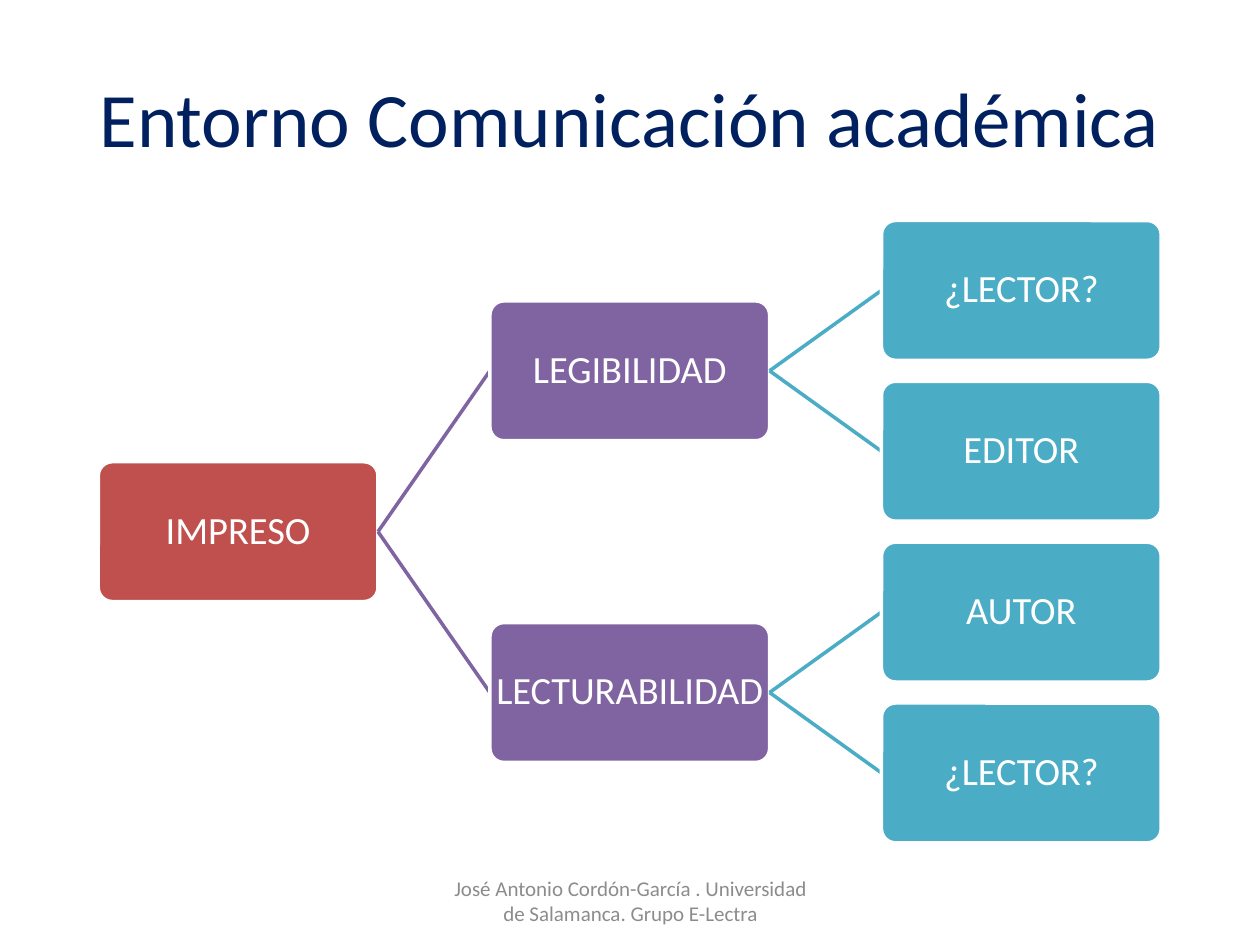
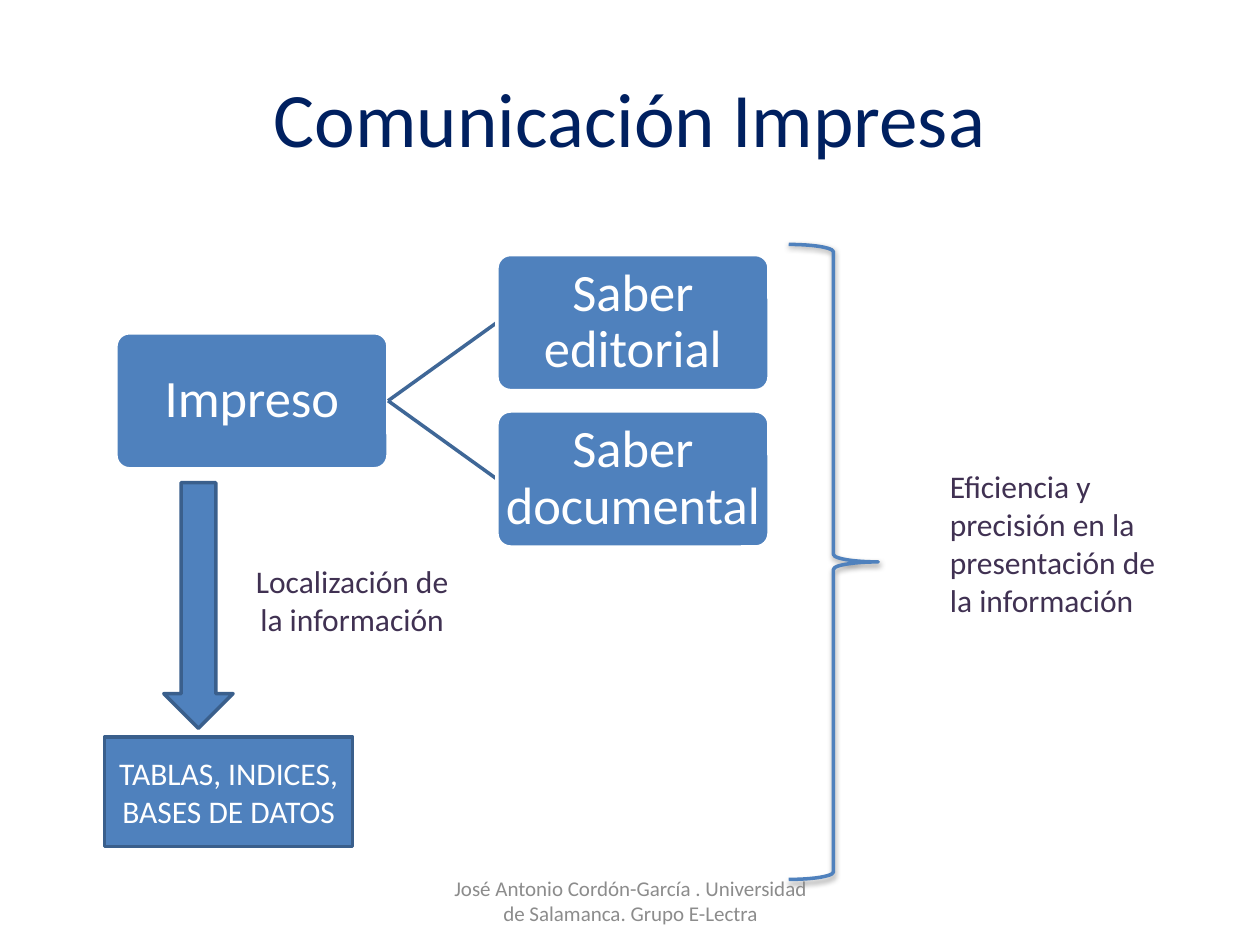
"""Two slides on printed academic communication, with tree diagrams."""
from dataclasses import dataclass

from lxml.etree import SubElement
from pptx import Presentation
from pptx.dml.color import RGBColor
from pptx.enum.shapes import MSO_CONNECTOR as LINE, MSO_SHAPE as SHAPE
from pptx.enum.text import MSO_ANCHOR as ANCHOR, PP_ALIGN as ALIGN
from pptx.oxml.ns import qn
from pptx.util import Inches, Pt

FONT = "Calibri"
FOOTER = "José Antonio Cordón-García . Universidad de Salamanca. Grupo E-Lectra"
COLORS = {
    "white": "FFFFFF", "title": "002060", "footer": "8C8C8C", "note": "403152",
    "red": "C0504D", "purple": "8064A2", "teal": "4BACC6",
    "blue": "4F81BD", "outline": "3A5F8C", "link": "3F6797",
}


@dataclass(frozen=True)
class Node:
    text: str
    children: tuple["Node", ...] = ()

    @property
    def leaves(self) -> int:
        return sum(child.leaves for child in self.children) or 1


@dataclass(frozen=True)
class Tree:
    root: Node
    left: float
    top: float
    width: float
    size: int
    fills: tuple[str, ...]
    links: tuple[str, ...]

    @property
    def height(self) -> float:
        return self.width / 2

    def corner(self, node: Node, level: int, row: int) -> tuple[float, float]:
        x = self.left + level * self.width * 1.4
        y = self.top + (row + (node.leaves - 1) / 2) * self.height * 1.15
        return x, y


@dataclass(frozen=True)
class Note:
    text: str
    box: tuple[float, float, float, float]
    size: int = 18
    color: str = "note"
    align: ALIGN = ALIGN.CENTER
    anchor: ANCHOR = ANCHOR.TOP


PRINT_TREE = Tree(
    Node("IMPRESO", (
        Node("LEGIBILIDAD", (Node("¿LECTOR?"), Node("EDITOR"))),
        Node("LECTURABILIDAD", (Node("AUTOR"), Node("¿LECTOR?"))),
    )),
    left=0.78, top=1.75, width=2.22, size=22,
    fills=("red", "purple", "teal"), links=("purple", "teal"),
)
KNOWLEDGE_TREE = Tree(
    Node("Impreso", (Node("Saber editorial"), Node("Saber documental"))),
    left=0.92, top=2.02, width=2.16, size=30,
    fills=("blue", "blue"), links=("link",),
)
FOOTER_NOTE = Note(FOOTER, (3.42, 6.95, 3.17, 0.4), 12, "footer", anchor=ANCHOR.MIDDLE)
NOTES = (
    Note("Localización de la información", (1.93, 4.41, 1.73, 1.01)),
    Note("Eficiencia y precisión en la presentación de la información",
         (7.44, 3.66, 2.05, 1.31), align=ALIGN.LEFT),
)


def rgb(name: str) -> RGBColor:
    return RGBColor.from_string(COLORS[name])


def write(sp, text: str, *, size: int, color: str = "white", align=ALIGN.CENTER,
          anchor=ANCHOR.MIDDLE, spacing: float = 1.0, inset: float | None = None) -> None:
    tf = sp.text_frame
    tf.word_wrap = True
    tf.vertical_anchor = anchor
    if inset is not None:
        tf.margin_left = tf.margin_right = tf.margin_top = tf.margin_bottom = Inches(inset)
    p = tf.paragraphs[0]
    p.alignment = align
    p.line_spacing = spacing
    r = p.add_run()
    r.text = text
    r.font.name, r.font.size = FONT, Pt(size)
    r.font.color.rgb = rgb(color)


def add_shape(s, kind: SHAPE, box: tuple, line: str, fill: str | None = None):
    sp = s.shapes.add_shape(kind, *map(Inches, box))
    sp.shadow.inherit = False
    if fill:
        sp.fill.solid()
        sp.fill.fore_color.rgb = rgb(fill)
    else:
        sp.fill.background()
    sp.line.color.rgb = rgb(line)
    sp.line.width = Pt(2)
    return sp


def add_link(s, start: tuple, end: tuple, color: str) -> None:
    link = s.shapes.add_connector(LINE.STRAIGHT, *map(Inches, start + end))
    link.line.color.rgb = rgb(color)
    link.line.width = Pt(2)
    SubElement(link._element.spPr, qn("a:effectLst"))


def add_note(s, note: Note) -> None:
    sp = s.shapes.add_textbox(*map(Inches, note.box))
    write(sp, note.text, size=note.size, color=note.color, align=note.align, anchor=note.anchor)


def add_branch(s, tree: Tree, node: Node, level: int = 0, row: int = 0) -> None:
    x, y = tree.corner(node, level, row)
    sp = add_shape(s, SHAPE.ROUNDED_RECTANGLE, (x, y, tree.width, tree.height),
                   "white", tree.fills[level])
    sp.adjustments[0] = 0.1
    write(sp, node.text, size=tree.size, spacing=0.9, inset=0)
    middle = tree.height / 2
    for child in node.children:
        child_x, child_y = tree.corner(child, level + 1, row)
        add_link(s, (x + tree.width, y + middle), (child_x, child_y + middle), tree.links[level])
        add_branch(s, tree, child, level + 1, row)
        row += child.leaves


def add_soft_shadow(sp) -> None:
    effects = sp._element.spPr.find(qn("a:effectLst"))
    shadow = SubElement(effects, qn("a:outerShdw"), blurRad=str(Pt(3.1)), dist=str(Pt(1.6)),
                        dir="5400000", rotWithShape="0")
    color = SubElement(shadow, qn("a:srgbClr"), val="000000")
    SubElement(color, qn("a:alpha"), val="38000")


def add_slide(prs, title: str, tree: Tree):
    s = prs.slides.add_slide(prs.slide_layouts[5])
    sp = s.shapes.title
    sp.left, sp.top, sp.width, sp.height = map(Inches, (0.5, 0.3, 9, 1.25))
    write(sp, title, size=44, color="title")
    add_branch(s, tree, tree.root)
    return s


def main() -> None:
    prs = Presentation()
    prs.slide_width, prs.slide_height = Inches(10), Inches(7.5)

    s = add_slide(prs, "Entorno Comunicación académica", PRINT_TREE)
    add_note(s, FOOTER_NOTE)

    s = add_slide(prs, "Comunicación Impresa", KNOWLEDGE_TREE)
    tables = add_shape(s, SHAPE.RECTANGLE, (0.83, 5.85, 1.97, 0.87), "outline", "blue")
    write(tables, "TABLAS, INDICES, BASES DE DATOS", size=18)
    arrow = add_shape(s, SHAPE.RIGHT_ARROW, (0.6, 4.53, 1.95, 0.55), "outline", "blue")
    arrow.rotation = 90
    brace = add_shape(s, SHAPE.RIGHT_BRACE, (6.26, 1.94, 0.71, 5.04), "blue")
    add_soft_shadow(brace)
    for note in (*NOTES, FOOTER_NOTE):
        add_note(s, note)

    prs.save("out.pptx")


if __name__ == "__main__":
    main()
